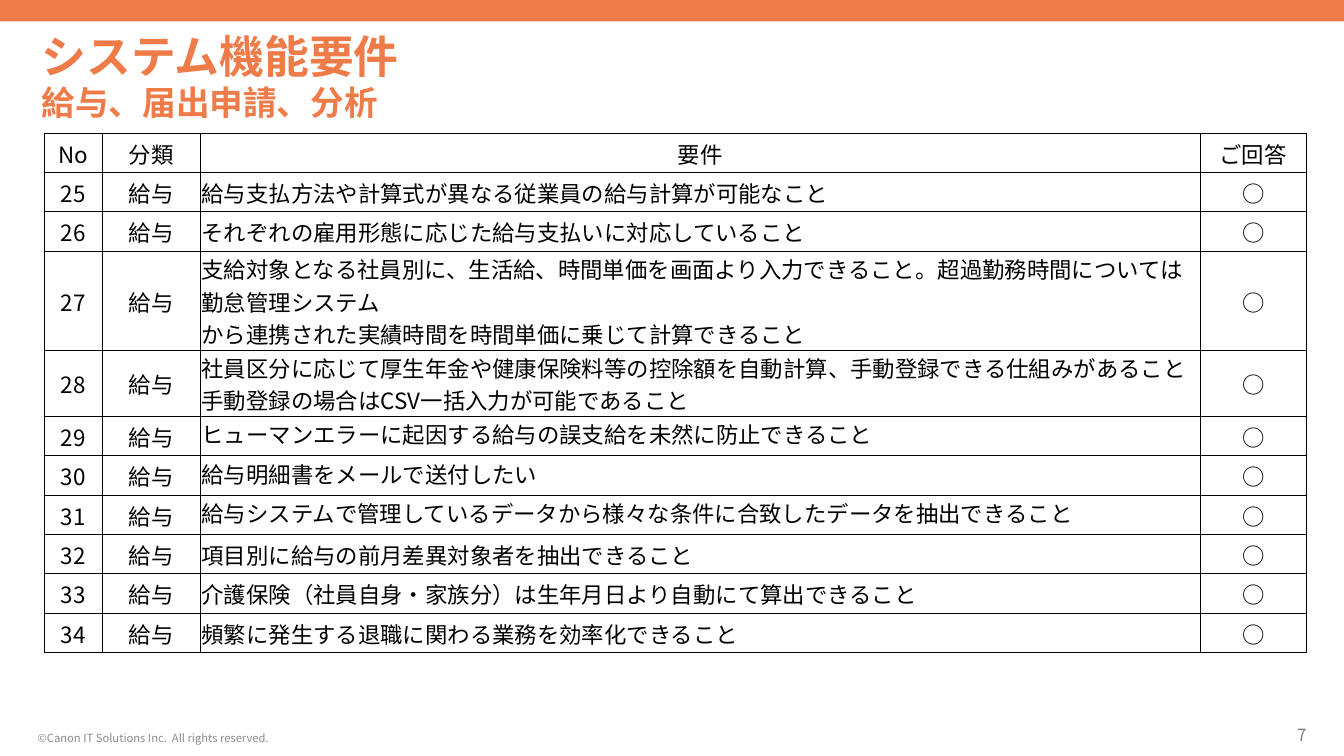
import pptx
import pptx.util
import pptx.dml.color
import pptx.enum.shapes
import pptx.enum.text
import pptx.oxml
import pptx.oxml.ns

Inches, Pt = pptx.util.Inches, pptx.util.Pt
ALIGN, ANCHOR = pptx.enum.text.PP_ALIGN, pptx.enum.text.MSO_ANCHOR
COLORS = {"accent": "EE7B48", "text": "000000", "number": "808080", "credit": "8C8C8C"}
FONT = "Noto Sans CJK JP"


def set_font(font, size, color, bold=False):
    font.size, font.bold, font.name = Pt(size), bold, FONT
    font.color.rgb = pptx.dml.color.RGBColor.from_string(COLORS[color])
    # East Asian typeface follows the Latin one
    latin = font._element.find(pptx.oxml.ns.qn("a:latin"))
    latin.addnext(pptx.oxml.parse_xml(
        f'<a:ea {pptx.oxml.ns.nsdecls("a")} typeface="{FONT}"/>'))


def set_margins(frame, left, top, right, bottom):
    frame.margin_left, frame.margin_top = Inches(left), Inches(top)
    frame.margin_right, frame.margin_bottom = Inches(right), Inches(bottom)


# Widescreen slide, 16:9
presentation = pptx.Presentation()
presentation.slide_width = Inches(10)
presentation.slide_height = presentation.slide_width * 9 // 16
slide = presentation.slides.add_slide(presentation.slide_layouts[5])

# Top band
band = slide.shapes.add_shape(pptx.enum.shapes.MSO_SHAPE.RECTANGLE,
                              0, 0, presentation.slide_width, Inches(0.16))
band.shadow.inherit = False
band.fill.solid()
band.fill.fore_color.rgb = pptx.dml.color.RGBColor.from_string(COLORS["accent"])
band.line.fill.background()

# Title and subtitle lines
title = slide.shapes.title
title.left, title.top, title.width, title.height = map(Inches, (0.31, 0.24, 7.87, 0.39))
frame = title.text_frame
frame.auto_size = pptx.enum.text.MSO_AUTO_SIZE.NONE
frame.vertical_anchor = ANCHOR.TOP
set_margins(frame, 0, 0, 0, 0)
paragraph = frame.paragraphs[0]
paragraph.alignment = ALIGN.LEFT
paragraph.line_spacing = 0.97
heading = paragraph.add_run()
heading.text = "システム機能要件"
set_font(heading.font, 24, "accent", True)
paragraph.add_line_break()
subheading = paragraph.add_run()
subheading.text = "給与、届出申請、分析"
set_font(subheading.font, 18, "accent", True)

# Requirements: numbered from 25; some texts sit at the top of their cell
FIRST_NUMBER = 25
TOP_ANCHORED = range(28, 32)
requirements = [
    "給与支払方法や計算式が異なる従業員の給与計算が可能なこと",
    "それぞれの雇用形態に応じた給与支払いに対応していること",
    "支給対象となる社員別に、生活給、時間単価を画面より入力できること。"
    "超過勤務時間については勤怠管理システム\v"
    "から連携された実績時間を時間単価に乗じて計算できること",
    "社員区分に応じて厚生年金や健康保険料等の控除額を自動計算、"
    "手動登録できる仕組みがあること\v手動登録の場合はCSV一括入力が可能であること",
    "ヒューマンエラーに起因する給与の誤支給を未然に防止できること",
    "給与明細書をメールで送付したい",
    "給与システムで管理しているデータから様々な条件に合致したデータを抽出できること",
    "項目別に給与の前月差異対象者を抽出できること",
    "介護保険（社員自身・家族分）は生年月日より自動にて算出できること",
    "頻繁に発生する退職に関わる業務を効率化できること",
]
rows = [("No", "分類", "要件", "ご回答")]
rows += [(str(number), "給与", requirement, "○")
         for number, requirement in enumerate(requirements, FIRST_NUMBER)]
column_widths = [0.43, 0.73, 7.44, 0.79]
ROW_HEIGHT = 21.1  # points
tall_rows = {3: 2 * ROW_HEIGHT, 4: 28}
row_heights = [tall_rows.get(index, ROW_HEIGHT) for index in range(len(rows))]

# Table
table = slide.shapes.add_table(
    len(rows), len(column_widths), Inches(0.33), Inches(0.99),
    Inches(sum(column_widths)), Pt(sum(row_heights))).table
table.first_row = table.horz_banding = False
for column, width in zip(table.columns, column_widths):
    column.width = Inches(width)
for row_index, (values, height) in enumerate(zip(rows, row_heights)):
    table.rows[row_index].height = Pt(height)
    for column_index, value in enumerate(values):
        cell = table.cell(row_index, column_index)
        is_requirement = column_index == 2 and row_index > 0
        at_top = is_requirement and int(values[0]) in TOP_ANCHORED
        cell.vertical_anchor = ANCHOR.TOP if at_top else ANCHOR.MIDDLE
        set_margins(cell, 0.01, 0.01, 0.01, 0)
        paragraph = cell.text_frame.paragraphs[0]
        paragraph.text = value
        paragraph.alignment = ALIGN.LEFT if is_requirement else ALIGN.CENTER
        set_font(paragraph.font, 12, "text")
        # Thin border on all four sides, then no fill
        properties = cell._tc.get_or_add_tcPr()
        for side in ("lnL", "lnR", "lnT", "lnB"):
            properties.append(pptx.oxml.parse_xml(
                f'<a:{side} {pptx.oxml.ns.nsdecls("a")} w="{Pt(0.5)}"><a:solidFill>'
                f'<a:srgbClr val="{COLORS["text"]}"/></a:solidFill></a:{side}>'))
        cell.fill.background()

# Footer: copyright line and page number
footers = [
    ("©Canon IT Solutions Inc.  All rights reserved.", 0.28, 2.36, 6, "credit", ALIGN.LEFT),
    ("7", 9.33, 0.39, 9, "number", ALIGN.RIGHT),
]
for text, left, width, size, color, alignment in footers:
    box = slide.shapes.add_textbox(Inches(left), Inches(5.39), Inches(width), Inches(0.15))
    frame = box.text_frame
    frame.word_wrap = True
    frame.vertical_anchor = ANCHOR.BOTTOM
    set_margins(frame, 0, 0, 0, 0)
    paragraph = frame.paragraphs[0]
    paragraph.text = text
    paragraph.alignment = alignment
    set_font(paragraph.font, size, color)

presentation.save("out.pptx")
